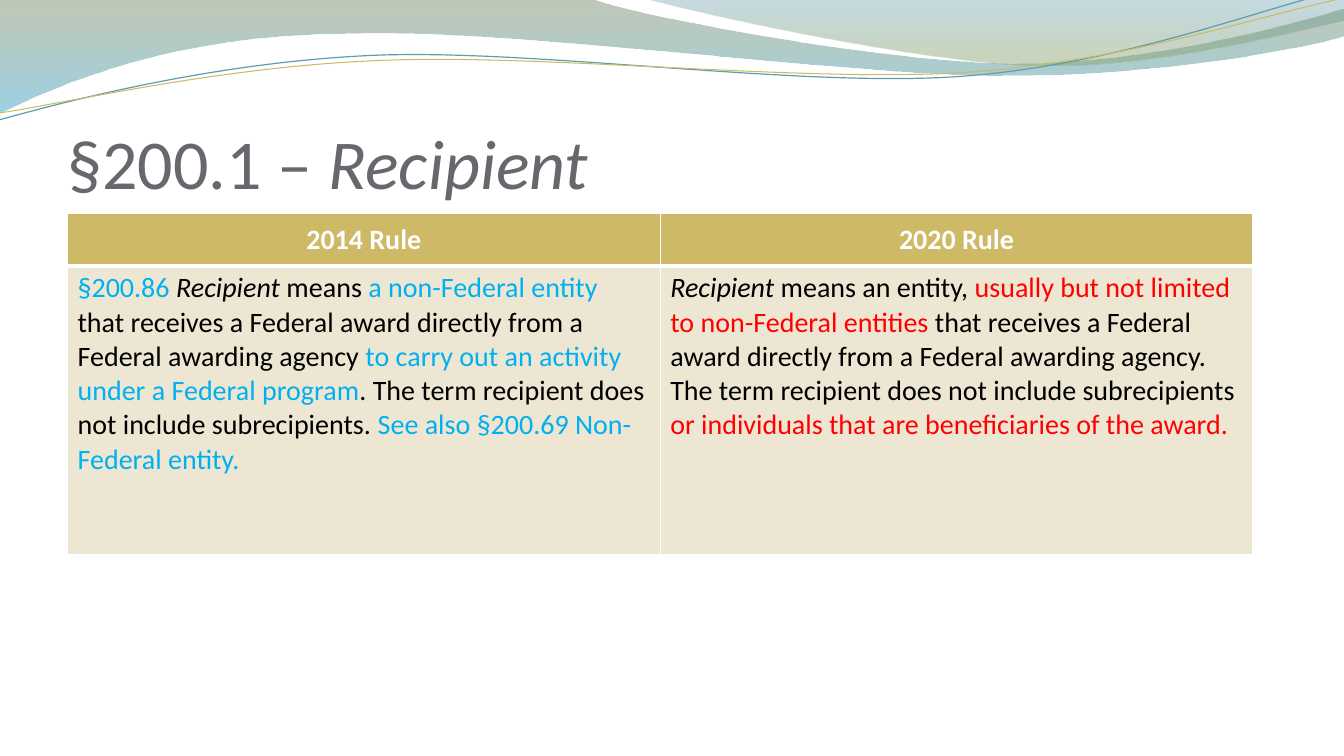
"""Build a slide comparing the 2014 and 2020 definitions of a recipient."""
import math
from dataclasses import dataclass

from lxml import etree
from pptx import Presentation
from pptx import slide as sl
from pptx import util as u
from pptx.dml import color as dml
from pptx.enum import text as t
from pptx.oxml import ns
from pptx.table import _Cell as Cell
from pptx.text import text as tx

FONT = "Calibri"
COLORS = {
    "white": "FFFFFF", "black": "000000", "title": "69676D",
    "gold": "CEB966", "cream": "EDE6D3", "blue": "00B0F0", "red": "FF0000",
    "olive": "74855E", "sky": "4AACCE", "teal": "45889F",
    "moss": "8AA36D", "steel": "5E9CB1",
}
Point = tuple[float, float]


@dataclass(frozen=True)
class Stop:
    position: float
    color: str
    opacity: int


@dataclass(frozen=True)
class Wave:
    start: Point
    segments: list[tuple[float, ...]]
    stops: tuple[Stop, ...] = ()
    line_color: str = ""
    line_width: float = 0
    center: Point = (0, 0)
    rotation: float = 0


@dataclass(frozen=True)
class Span:
    wording: str
    color: str = "black"
    italic: bool = False
    bold: bool = False


WAVES = [
    Wave((0, -0.01), [
        (5.87, -0.01),
        (6.34, 0.17, 8.85, 0.63, 10.11, 0.63),
        (11.38, 0.63, 12.78, 0.26, 13.33, 0.09),
        (13.35, 0.36),
        (13.11, 0.44, 11.6, 0.76, 9.94, 0.75),
        (8.29, 0.75, 5.09, 0.28, 3.43, 0.34),
        (1.72, 0.35, 0.61, 0.83, -0.01, 1.13),
    ], stops=(Stop(0, "olive", 45), Stop(1, "sky", 55))),
    Wave((6.39, -0.01), [
        (6.79, 0.11, 9.09, 0.62, 10.25, 0.65),
        (11.41, 0.69, 12.82, 0.32, 13.33, 0.21),
        (13.33, 0),
    ], stops=(Stop(0, "teal", 30), Stop(0.8, "moss", 45))),
    Wave((-0.01, 1.19), [
        (0.64, 1.01, 2.11, 0.62, 3.69, 0.55),
        (5.27, 0.48, 7.9, 0.87, 9.5, 0.76),
        (11.1, 0.65, 12.52, 0.08, 13.31, -0.1),
    ], line_color="steel", line_width=0.85, center=(6.65, 0.57), rotation=357.3),
    Wave((0, 1.12), [
        (0.63, 1.03, 2.18, 0.66, 3.78, 0.6),
        (5.37, 0.53, 7.96, 0.82, 9.55, 0.72),
        (11.15, 0.62, 12.55, 0.14, 13.34, -0.02),
    ], line_color="gold", line_width=0.75, center=(6.67, 0.59), rotation=357.3),
]
TITLE = [Span("§200.1 – ", "title"), Span("Recipient", "title", italic=True)]
HEADINGS = ["2014 Rule", "2020 Rule"]
RULES = [
    [
        Span("§200.86 ", "blue"),
        Span("Recipient", italic=True),
        Span(" means "),
        Span("a non-Federal entity ", "blue"),
        Span("that receives a Federal award directly from a Federal awarding agency "),
        Span("to carry out an activity under a Federal program", "blue"),
        Span(". The term recipient does not include subrecipients. "),
        Span("See also §200.69 Non-Federal entity.", "blue"),
    ],
    [
        Span("Recipient ", italic=True),
        Span("means an entity, "),
        Span("usually but not limited to non-Federal entities", "red"),
        Span(" that receives a Federal award directly from a Federal awarding agency. "
             "The term recipient does not include subrecipients "),
        Span("or individuals that are beneficiaries of the award.", "red"),
    ],
]


def rgb(name: str) -> dml.RGBColor:
    return dml.RGBColor.from_string(COLORS[name])


def unrotate(point: Point, wave: Wave) -> tuple[u.Length, u.Length]:
    angle = math.radians(-wave.rotation)
    dx, dy = point[0] - wave.center[0], point[1] - wave.center[1]
    x = wave.center[0] + dx * math.cos(angle) - dy * math.sin(angle)
    y = wave.center[1] + dx * math.sin(angle) + dy * math.cos(angle)
    return u.Inches(x), u.Inches(y)


def bend(outline: etree._Element, wave: Wave) -> None:
    lines = iter(outline.findall(ns.qn("a:lnTo")))
    for segment in wave.segments:
        first = next(lines)
        if len(segment) == 2:
            continue
        curve = etree.Element(ns.qn("a:cubicBezTo"))
        first.addprevious(curve)
        for line in (first, next(lines), next(lines)):
            curve.append(line[0])
            outline.remove(line)


def draw_wave(slide: sl.Slide, wave: Wave) -> None:
    points = [pair for part in wave.segments for pair in zip(part[::2], part[1::2])]
    builder = slide.shapes.build_freeform(*unrotate(wave.start, wave))
    builder.add_line_segments([unrotate(point, wave) for point in points],
                              close=bool(wave.stops))
    shape = builder.convert_to_shape()
    shape.rotation = wave.rotation
    shape.shadow.inherit = False
    bend(shape.element.spPr.find(".//" + ns.qn("a:path")), wave)
    if not wave.stops:
        shape.fill.background()
        shape.line.color.rgb = rgb(wave.line_color)
        shape.line.width = u.Pt(wave.line_width)
        return
    shape.line.fill.background()
    shape.fill.gradient()
    shape.fill.gradient_angle = 270
    for target, stop in zip(shape.fill.gradient_stops, wave.stops):
        target.position = stop.position
        target.color.rgb = rgb(stop.color)
    swatches = shape.element.spPr.iterfind(".//" + ns.qn("a:gs") + "/" + ns.qn("a:srgbClr"))
    for swatch, stop in zip(swatches, wave.stops):
        etree.SubElement(swatch, ns.qn("a:alpha"), val=str(stop.opacity * 1000))


def add_spans(paragraph: tx._Paragraph, spans: list[Span], size: float) -> None:
    for span in spans:
        run = paragraph.add_run()
        run.text = span.wording
        run.font.name = FONT
        run.font.size = u.Pt(size)
        run.font.bold = span.bold
        run.font.italic = span.italic
        run.font.color.rgb = rgb(span.color)


def draw_title(slide: sl.Slide) -> None:
    box = slide.shapes.add_textbox(u.Inches(0.67), u.Inches(0.77), u.Inches(12), u.Inches(1.25))
    frame = box.text_frame
    frame.word_wrap = True
    frame.vertical_anchor = t.MSO_ANCHOR.BOTTOM
    frame.margin_left = frame.margin_right = frame.margin_bottom = 0
    frame.margin_top = u.Inches(0.05)
    add_spans(frame.paragraphs[0], TITLE, 50)


def style_cell(cell: Cell, fill: str, top: float, bottom: float) -> None:
    properties = cell._tc.get_or_add_tcPr()
    for side, width in (("L", 1), ("R", 1), ("T", top), ("B", bottom)):
        border = etree.SubElement(properties, ns.qn(f"a:ln{side}"), w=str(u.Pt(width)))
        solid = etree.SubElement(border, ns.qn("a:solidFill"))
        etree.SubElement(solid, ns.qn("a:srgbClr"), val=COLORS["white"])
    cell.fill.solid()
    cell.fill.fore_color.rgb = rgb(fill)


def draw_table(slide: sl.Slide) -> None:
    table = slide.shapes.add_table(
        2, 2, u.Inches(0.67), u.Inches(2.12), u.Inches(11.76), u.Inches(3.38)).table
    table.horz_banding = False
    for row, height in zip(table.rows, (0.52, 2.86)):
        row.height = u.Inches(height)
    for column, (heading, rule) in enumerate(zip(HEADINGS, RULES)):
        header, body = table.cell(0, column), table.cell(1, column)
        style_cell(header, "gold", 1, 3)
        style_cell(body, "cream", 3, 1)
        header.vertical_anchor = t.MSO_ANCHOR.MIDDLE
        title = header.text_frame.paragraphs[0]
        title.alignment = t.PP_ALIGN.CENTER
        add_spans(title, [Span(heading, "white", bold=True)], 20)
        add_spans(body.text_frame.paragraphs[0], rule, 20)


def main() -> None:
    presentation = Presentation()
    presentation.slide_width = u.Inches(40 / 3)
    presentation.slide_height = u.Inches(7.5)
    slide = presentation.slides.add_slide(presentation.slide_layouts[6])
    for wave in WAVES:
        draw_wave(slide, wave)
    draw_title(slide)
    draw_table(slide)
    presentation.save("out.pptx")


if __name__ == "__main__":
    main()
